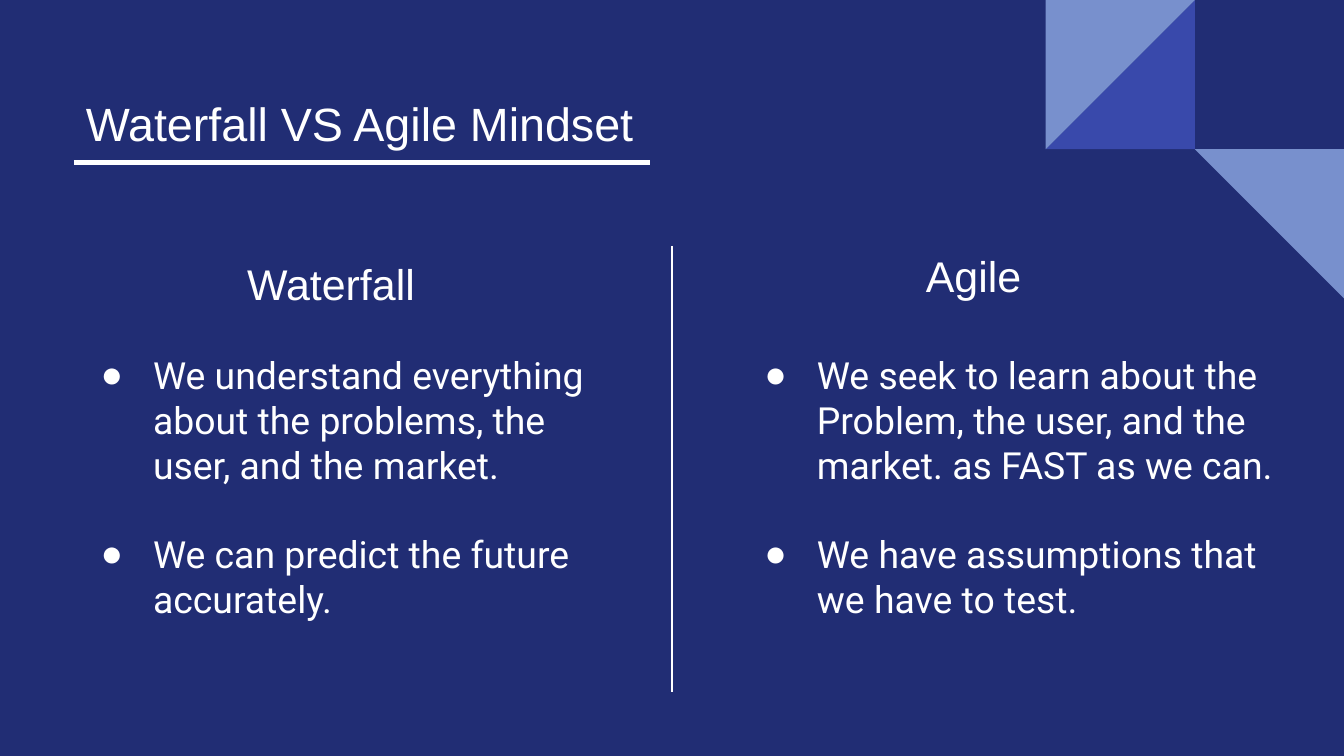
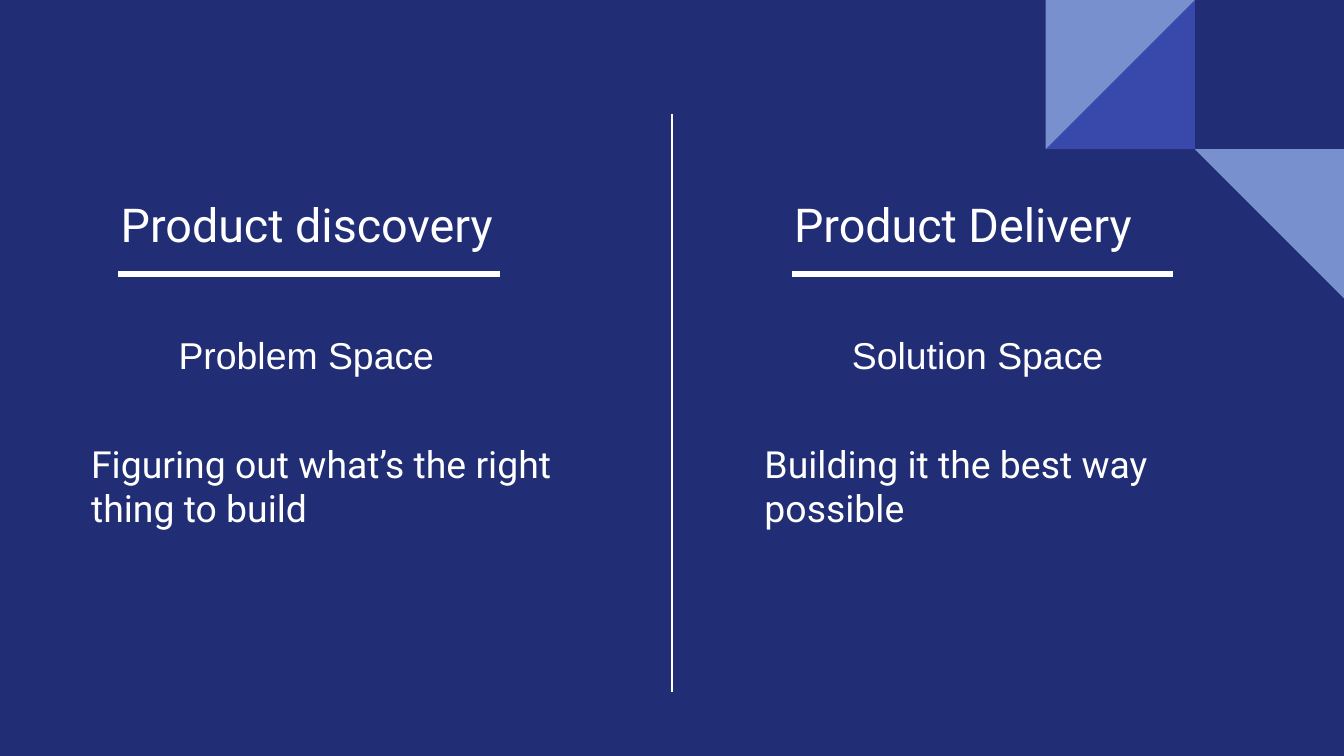
"""Build two slides that compare product mindsets in two columns."""
import pptx
import pptx.dml.color
import pptx.enum.shapes
import pptx.enum.text
import pptx.oxml
import pptx.util
import lxml.etree

Inches = pptx.util.Inches
Pt = pptx.util.Pt

COLORS = {
    "background": "212D74",
    "light": "7890CD",
    "accent": "3949AB",
    "text": "FFFFFF",
}
STYLES = {
    "title": {"font": {"name": "Arial", "size": Pt(25)}, "paragraph": {"line_spacing": 1.15}},
    "heading": {"font": {"name": "Arial", "size": Pt(23)}, "paragraph": {"line_spacing": 1.15}},
    "space": {"font": {"name": "Arial", "size": Pt(20)}, "paragraph": {"line_spacing": 1.15}},
    "phase": {"font": {"name": "Roboto", "size": Pt(25)}, "paragraph": {}},
    "body": {"font": {"name": "Roboto", "size": Pt(20)}, "paragraph": {}},
}
FRAME = {
    "word_wrap": True,
    "auto_size": pptx.enum.text.MSO_AUTO_SIZE.NONE,
    "vertical_anchor": pptx.enum.text.MSO_ANCHOR.TOP,
    "margin_left": Inches(0.1),
    "margin_top": Inches(0.1),
    "margin_right": Inches(0.1),
    "margin_bottom": Inches(0.1),
}
SLIDE_SIZE = {"slide_width": Inches(10), "slide_height": Inches(10) * 9 // 16}
TILE = 1.11
BULLET_GAP = Pt(24)


def rgb(name):
    """Return the named colour."""
    return pptx.dml.color.RGBColor.from_string(COLORS[name])


def apply_format(target, values):
    """Set every attribute in values on the target."""
    for attribute, value in values.items():
        setattr(target, attribute, value)


def add_bullet(paragraph):
    """Give a paragraph a hanging round bullet in the text colour."""
    properties = paragraph._p.get_or_add_pPr()
    properties.set("marL", str(Inches(0.5)))
    properties.set("indent", str(Inches(-0.39)))
    color = lxml.etree.SubElement(properties, pptx.oxml.ns.qn("a:buClr"))
    lxml.etree.SubElement(color, pptx.oxml.ns.qn("a:srgbClr"), val=COLORS["text"])
    lxml.etree.SubElement(properties, pptx.oxml.ns.qn("a:buFont"), typeface="Arial")
    lxml.etree.SubElement(properties, pptx.oxml.ns.qn("a:buChar"), char="●")


def add_text(slide, box, lines, style, bulleted=False):
    """Place lines of text in a box, one paragraph each."""
    frame = slide.shapes.add_textbox(*map(Inches, box)).text_frame
    apply_format(frame, FRAME)
    for index, line in enumerate(lines):
        paragraph = frame.paragraphs[0] if index == 0 else frame.add_paragraph()
        apply_format(paragraph, STYLES[style]["paragraph"])
        if index:
            paragraph.space_before = BULLET_GAP
        if bulleted:
            add_bullet(paragraph)
        run = paragraph.add_run()
        run.text = line
        apply_format(run.font, STYLES[style]["font"])
        run.font.color.rgb = rgb("text")


def add_rule(slide, start, end, width):
    """Draw a straight line without a shadow."""
    rule = slide.shapes.add_connector(
        pptx.enum.shapes.MSO_CONNECTOR.STRAIGHT, *map(Inches, start + end))
    rule.line.color.rgb = rgb("text")
    rule.line.width = Pt(width)
    lxml.etree.SubElement(rule._element.spPr, pptx.oxml.ns.qn("a:effectLst"))


def add_corner(slide, left, top):
    """Draw the triangle ornament from its top left corner."""
    triangles = [(0, 0, 270, "accent"), (0, 0, 90, "light"), (1, 1, 180, "light")]
    for column, row, rotation, color in triangles:
        triangle = slide.shapes.add_shape(
            pptx.enum.shapes.MSO_SHAPE.RIGHT_TRIANGLE,
            Inches(left + column * TILE), Inches(top + row * TILE),
            Inches(TILE), Inches(TILE))
        triangle.rotation = rotation
        triangle.shadow.inherit = False
        triangle.fill.solid()
        triangle.fill.fore_color.rgb = rgb(color)
        triangle.line.fill.background()


def add_base(presentation, divider_top):
    """Add a slide with the shared background, ornament and divider."""
    slide = presentation.slides.add_slide(presentation.slide_layouts[6])
    slide.background.fill.solid()
    slide.background.fill.fore_color.rgb = rgb("background")
    add_corner(slide, 7.78, 0)
    add_rule(slide, (5, divider_top), (5, 5.15), 1.5)
    return slide


def add_title(slide, left, top):
    """Place the underlined slide title."""
    add_text(slide, (left, top, 4.32, 0.43), ["Waterfall VS Agile Mindset"], "title")
    add_rule(slide, (left + 0.01, top + 0.67), (left + 4.3, top + 0.67), 3)


def add_mindset(slide, box, heading, heading_box, points):
    """Place a heading, offset from the box, above a bulleted list."""
    left, top, width, height = box
    shift, rise, heading_width, heading_height = heading_box
    add_text(slide, (left + shift, top - rise, heading_width, heading_height),
             [heading], "heading")
    add_text(slide, (left, top, width, height), points, "body", bulleted=True)


def add_phase(slide, left, top, phase, space, summary):
    """Place an underlined phase, its space and its summary."""
    add_text(slide, (left + 0.22, top, 3.19, 0.56), [phase], "phase")
    add_rule(slide, (left + 0.3, top + 0.68), (left + 3.14, top + 0.68), 3)
    add_text(slide, (left + 0.65, top + 0.96, 2.35, 0.64), [space], "space")
    add_text(slide, (left, top + 1.82, 3.76, 0.89), [summary], "body")


def build_mindset_slide(presentation):
    """Build the slide that sets Waterfall against Agile."""
    slide = add_base(presentation, 1.83)
    add_title(slide, 0.54, 0.54)
    add_mindset(slide, (0.54, 2.52, 3.99, 2.18), "Waterfall", (1.2, 0.76, 1.59, 0.49), [
        "We understand everything about the problems, the user, and the market.",
        "We can predict the future accurately.",
    ])
    add_mindset(slide, (5.48, 2.52, 4.13, 2.18), "Agile", (1.31, 0.82, 0.94, 0.61), [
        "We seek to learn about the Problem, the user, and the market. as FAST as we can.",
        "We have assumptions that we have to test.",
    ])


def build_phase_slide(presentation):
    """Build the slide that sets discovery against delivery."""
    slide = add_base(presentation, 0.85)
    phases = [
        ("Product discovery", "Problem Space", "Figuring out what’s the right thing to build"),
        ("Product Delivery", "Solution Space", "Building it the best way possible"),
    ]
    for index, phase in enumerate(phases):
        add_phase(slide, 0.58 + index * 5.01, 1.36, *phase)


def main():
    """Build and save the presentation."""
    presentation = pptx.Presentation()
    apply_format(presentation, SLIDE_SIZE)
    build_mindset_slide(presentation)
    build_phase_slide(presentation)
    presentation.save("out.pptx")


if __name__ == "__main__":
    main()
